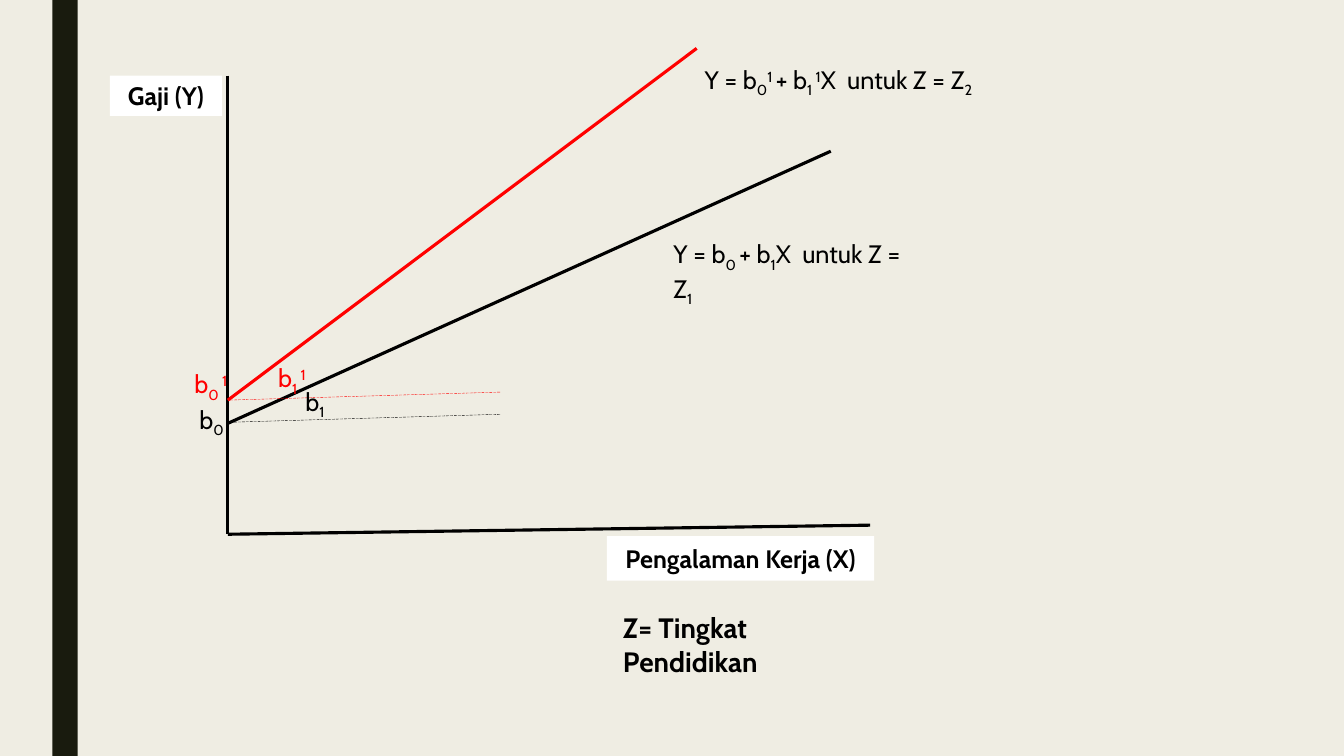
from lxml import etree
from pptx import Presentation
from pptx.dml.color import RGBColor
from pptx.enum.dml import MSO_LINE
from pptx.enum.shapes import MSO_CONNECTOR, MSO_SHAPE
from pptx.enum.text import MSO_ANCHOR, MSO_AUTO_SIZE, PP_ALIGN
from pptx.oxml.ns import qn
from pptx.util import Inches, Pt

STRAIGHT = MSO_CONNECTOR.STRAIGHT
RECTANGLE = MSO_SHAPE.RECTANGLE
LONG_DASH = MSO_LINE.LONG_DASH
MIDDLE = MSO_ANCHOR.MIDDLE
GROW = MSO_AUTO_SIZE.SHAPE_TO_FIT_TEXT
CENTER = PP_ALIGN.CENTER

FONT = "Cabin"
BLACK, RED, WHITE = "000000", "FF0000", "FFFFFF"
PAPER, BAND = "EFEDE3", "191B0E"
SUB, SUPER = -25000, 30000
AXIS_X = 2.26


def color(hex_value):
    return RGBColor.from_string(hex_value)


def style_run(run, hex_value, size, bold=False):
    run.font.name = FONT
    run.font.size = Pt(size)
    run.font.bold = bold
    run.font.color.rgb = color(hex_value)


def add_line(slide, start, end, hex_value=BLACK, width=2.25, dash=None):
    points = [Inches(value) for value in (*start, *end)]
    line = slide.shapes.add_connector(STRAIGHT, *points)
    line.line.color.rgb = color(hex_value)
    line.line.width = Pt(width)
    if dash:
        line.line.dash_style = dash
    etree.SubElement(line._element.spPr, qn("a:effectLst"))


def add_block(slide, box, fill):
    block = slide.shapes.add_shape(RECTANGLE, *map(Inches, box))
    block.shadow.inherit = False
    block.fill.solid()
    block.fill.fore_color.rgb = color(fill)
    block.line.fill.background()
    return block


def add_axis_title(slide, box, title):
    frame = add_block(slide, box, WHITE).text_frame
    frame.word_wrap = True
    frame.vertical_anchor = MIDDLE
    frame.text = title
    paragraph = frame.paragraphs[0]
    paragraph.alignment = CENTER
    style_run(paragraph.runs[0], BLACK, 18, bold=True)


def add_formula(slide, box, parts, hex_value=BLACK, size=18, bold=False):
    frame = slide.shapes.add_textbox(*map(Inches, box)).text_frame
    frame.word_wrap = True
    frame.auto_size = GROW
    for text, baseline in parts:
        run = frame.paragraphs[0].add_run()
        run.text = text
        style_run(run, hex_value, size, bold)
        if baseline:
            run._r.get_or_add_rPr().set("baseline", str(baseline))


def main():
    presentation = Presentation()
    presentation.slide_width = Inches(13.33)
    presentation.slide_height = Inches(7.5)
    slide = presentation.slides.add_slide(presentation.slide_layouts[6])
    slide.background.fill.solid()
    slide.background.fill.fore_color.rgb = color(PAPER)

    add_block(slide, (0.52, 0, 0.25, 7.5), BAND)

    add_line(slide, (AXIS_X, 0.75), (AXIS_X, 5.3))
    add_line(slide, (8.63, 5.21), (AXIS_X, 5.3))
    add_line(slide, (8.24, 1.5), (AXIS_X, 4.2))
    add_formula(slide, (6.58, 2.32, 2.69, 0.4), [
        ("Y = b", 0), ("0 ", SUB), ("+ b", 0), ("1", SUB),
        ("X  untuk Z = Z", 0), ("1", SUB)])
    add_line(slide, (6.91, 0.48), (AXIS_X, 3.97), RED)
    add_formula(slide, (6.89, 0.59, 2.9, 0.4), [
        ("Y = b", 0), ("0", SUB), ("1 ", SUPER), ("+ b", 0), ("1 ", SUB),
        ("1", SUPER), ("X  untuk Z = Z", 0), ("2", SUB)])
    add_formula(slide, (6.08, 6.01, 2.82, 0.44),
                [("Z= Tingkat Pendidikan", 0)], size=20, bold=True)

    add_line(slide, (4.96, 4.11), (AXIS_X, 4.19), BLACK, 0.25, LONG_DASH)
    add_line(slide, (4.96, 3.89), (AXIS_X, 3.97), RED, 0.25, LONG_DASH)
    add_formula(slide, (2.93, 3.78, 0.49, 0.4), [("b", 0), ("1", SUB)])
    add_formula(slide, (2.66, 3.55, 0.59, 0.4),
                [("b", 0), ("1 ", SUB), ("1", SUPER)], RED)
    add_formula(slide, (1.88, 3.96, 0.59, 0.4), [("b", 0), ("0", SUB)])
    add_formula(slide, (1.83, 3.61, 0.73, 0.4),
                [("b", 0), ("0 ", SUB), ("1", SUPER)], RED)

    add_axis_title(slide, (1.09, 0.75, 1.11, 0.4), "Gaji (Y)")
    add_axis_title(slide, (6.02, 5.32, 2.65, 0.44), "Pengalaman Kerja (X)")
    presentation.save("out.pptx")


if __name__ == "__main__":
    main()
